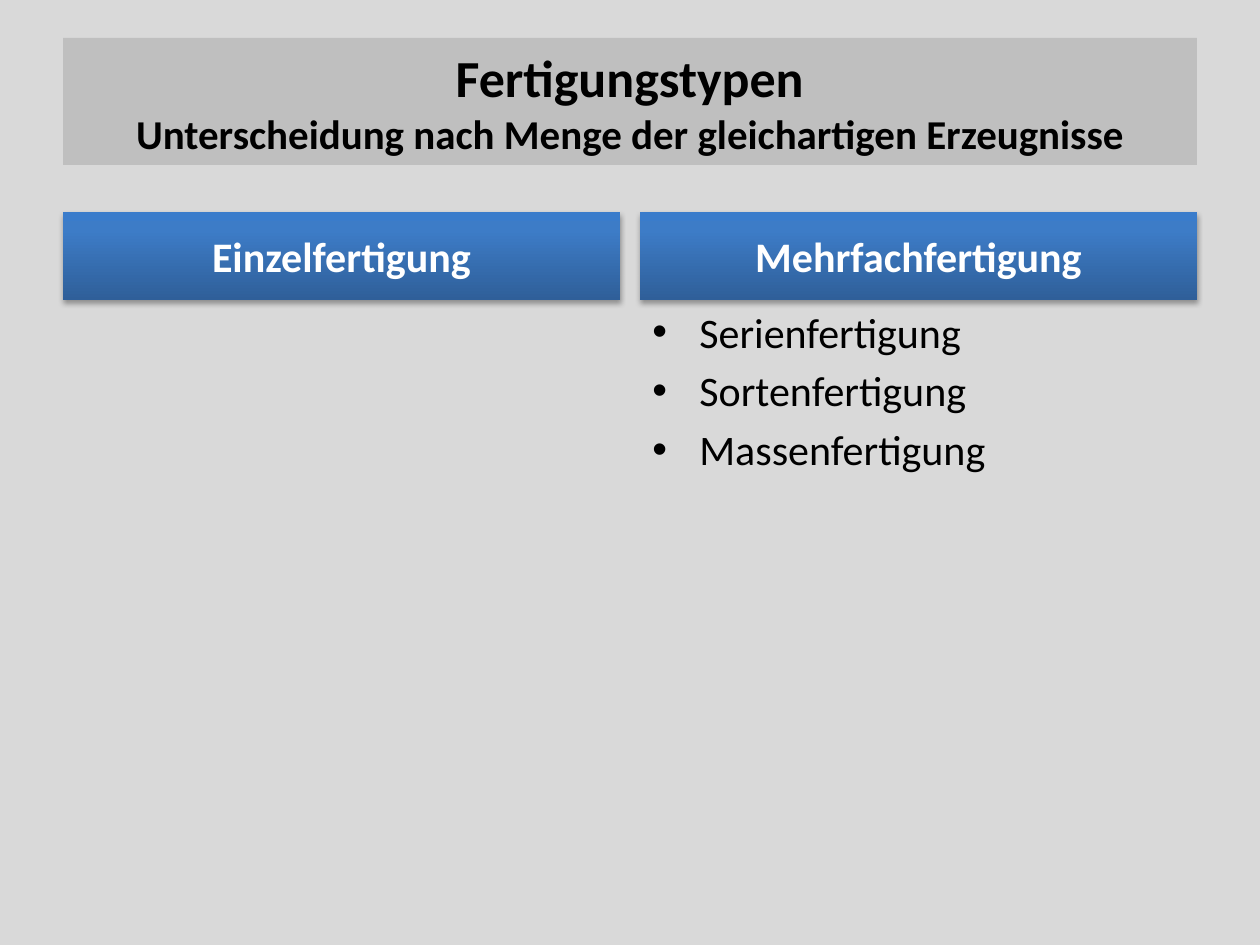
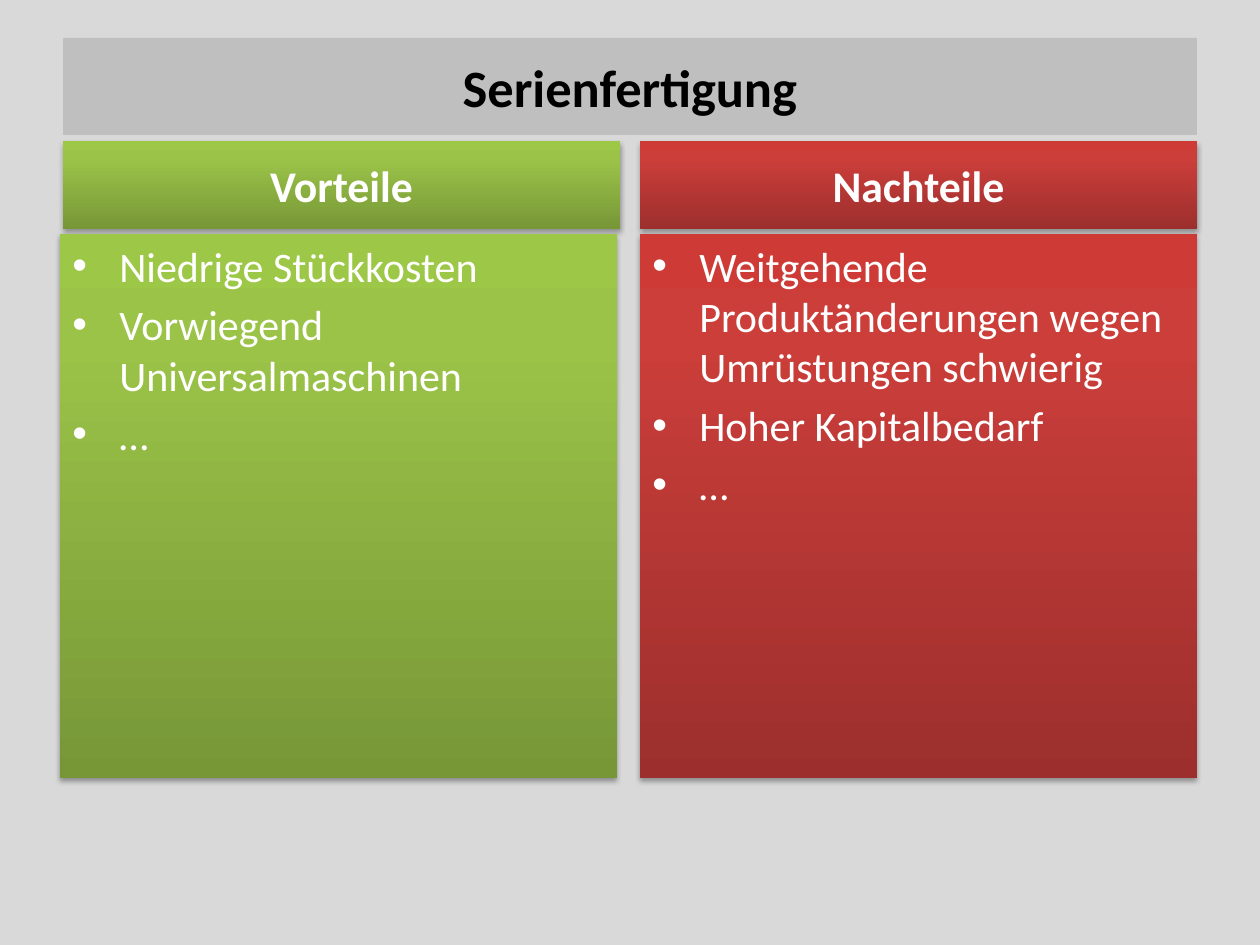
from lxml import etree
from pptx import Presentation
from pptx.dml.color import RGBColor
from pptx.enum.shapes import MSO_SHAPE
from pptx.enum.text import MSO_ANCHOR, MSO_AUTO_SIZE, PP_ALIGN
from pptx.oxml import parse_xml
from pptx.oxml.ns import nsdecls, qn
from pptx.util import Emu, Pt

RECT = MSO_SHAPE.RECTANGLE
TOP, MIDDLE = MSO_ANCHOR.TOP, MSO_ANCHOR.MIDDLE
LEFT, CENTER = PP_ALIGN.LEFT, PP_ALIGN.CENTER
NO_FIT = MSO_AUTO_SIZE.NONE

FONT = "Calibri"
COLORS = {"page": "D9D9D9", "band": "BFBFBF", "ink": "000000", "white": "FFFFFF"}
# Gradient colours from bottom to top
HUES = {
    "blue": ("2F5F99", "3D7CC7", "3A7CCB"),
    "green": ("779737", "9BC348", "9DC746"),
    "red": ("9C2F2D", "CB3E3A", "CE3B37"),
}
STOPS = (0, 80, 100)

# Shared grid in px, 126 to the inch
EDGE, WIDTH = 63, 1134
COL_W, GAP = 557, 20
HEAD_H, LIST_H = 88, 544
INDENT = 47


def px(n):
    return Emu(round(n * 914400 / 126))


def color(name):
    return RGBColor.from_string(COLORS[name])


def put_text(shape, paras, size=24, ink="white", bold=False, align=LEFT,
             anchor=TOP, bullet=False, space=0.2):
    """Write paragraphs; each is a string or a list of (line, size)."""
    frame = shape.text_frame
    frame.word_wrap = True
    frame.auto_size = NO_FIT
    frame.vertical_anchor = anchor
    for i, lines in enumerate(paras):
        para = frame.paragraphs[0] if i == 0 else frame.add_paragraph()
        para.alignment = align
        if isinstance(lines, str):
            lines = [(lines, size)]
        para.space_before = Pt(round(lines[0][1] * space, 1))
        for j, (line, points) in enumerate(lines):
            if j:
                para.add_line_break()
            run = para.add_run()
            run.text = line
            font = run.font
            font.name, font.size, font.bold = FONT, Pt(points), bold
            font.color.rgb = color(ink)
        if bullet:
            props = para._p.get_or_add_pPr()
            props.set("marL", str(px(INDENT)))
            props.set("indent", str(-px(INDENT)))
            etree.SubElement(props, qn("a:buFont")).set("typeface", "Arial")
            etree.SubElement(props, qn("a:buChar")).set("char", "•")


def add_panel(slide, box, hue):
    """Draw a shaded block with a soft shadow, or a bare box without a hue."""
    place = [px(n) for n in box]
    if hue is None:
        return slide.shapes.add_textbox(*place)
    panel = slide.shapes.add_shape(RECT, *place)
    panel.line.fill.background()
    # Three-stop gradient running upwards
    panel.fill.gradient()
    panel.fill.gradient_angle = 90
    stops = panel._element.spPr.find(".//" + qn("a:gsLst"))
    stops.clear()
    for pos, shade in zip(STOPS, HUES[hue]):
        stop = etree.SubElement(stops, qn("a:gs"), pos=str(pos * 1000))
        etree.SubElement(stop, qn("a:srgbClr"), val=shade)
    # Shadow
    panel.shadow.inherit = False
    panel._element.spPr.find(qn("a:effectLst")).append(parse_xml(
        f'<a:outerShdw {nsdecls("a")} blurRad="40000" dist="23000" dir="5400000"'
        ' rotWithShape="0"><a:srgbClr val="000000"><a:alpha val="35000"/>'
        '</a:srgbClr></a:outerShdw>'))
    return panel


def add_title(slide, lines, height):
    title = slide.shapes.title
    title.left, title.top = px(EDGE), px(38)
    title.width, title.height = px(WIDTH), px(height)
    title.fill.solid()
    title.fill.fore_color.rgb = color("band")
    put_text(title, [lines], ink="ink", bold=True, align=CENTER,
             anchor=MIDDLE, space=0)


def add_head(slide, left, top, text, hue, size):
    head = add_panel(slide, (left, top, COL_W, HEAD_H), hue)
    put_text(head, [text], size=size, bold=True, align=CENTER, anchor=MIDDLE)


def add_list(slide, left, top, items, hue=None):
    body = add_panel(slide, (left, top, COL_W, LIST_H), hue)
    put_text(body, items, ink="white" if hue else "ink", bullet=True)


def new_slide(deck):
    return deck.slides.add_slide(deck.slide_layouts[5])


def build_types(deck, cols):
    """Types of production by quantity."""
    slide = new_slide(deck)
    add_title(slide, [
        ("Fertigungstypen", 29.7),
        ("Unterscheidung nach Menge der gleichartigen Erzeugnisse", 23.4),
    ], 127)
    top = 212
    for left, text in zip(cols, ("Einzelfertigung", "Mehrfachfertigung")):
        add_head(slide, left, top, text, "blue", 24)
    add_list(slide, cols[1], top + HEAD_H,
             ["Serienfertigung", "Sortenfertigung", "Massenfertigung"])


def build_series(deck, cols):
    """Pros and cons of series production."""
    slide = new_slide(deck)
    add_title(slide, [("Serienfertigung", 30)], 97)
    sides = (
        ("Vorteile", "green", -3,
         ["Niedrige Stückkosten", "Vorwiegend Universalmaschinen", "…"]),
        ("Nachteile", "red", 0,
         ["Weitgehende Produktänderungen wegen Umrüstungen schwierig",
          "Hoher Kapitalbedarf", "…"]),
    )
    top = 141
    for left, (text, hue, shift, items) in zip(cols, sides):
        add_head(slide, left, top, text, hue, 25)
        add_list(slide, left + shift, top + HEAD_H + 5, items, hue)


def main():
    deck = Presentation()
    deck.slide_width, deck.slide_height = px(1260), px(945)
    page = deck.slide_master.background.fill
    page.solid()
    page.fore_color.rgb = color("page")
    cols = [EDGE + i * (COL_W + GAP) for i in range(2)]
    build_types(deck, cols)
    build_series(deck, cols)
    deck.save("out.pptx")


if __name__ == "__main__":
    main()
